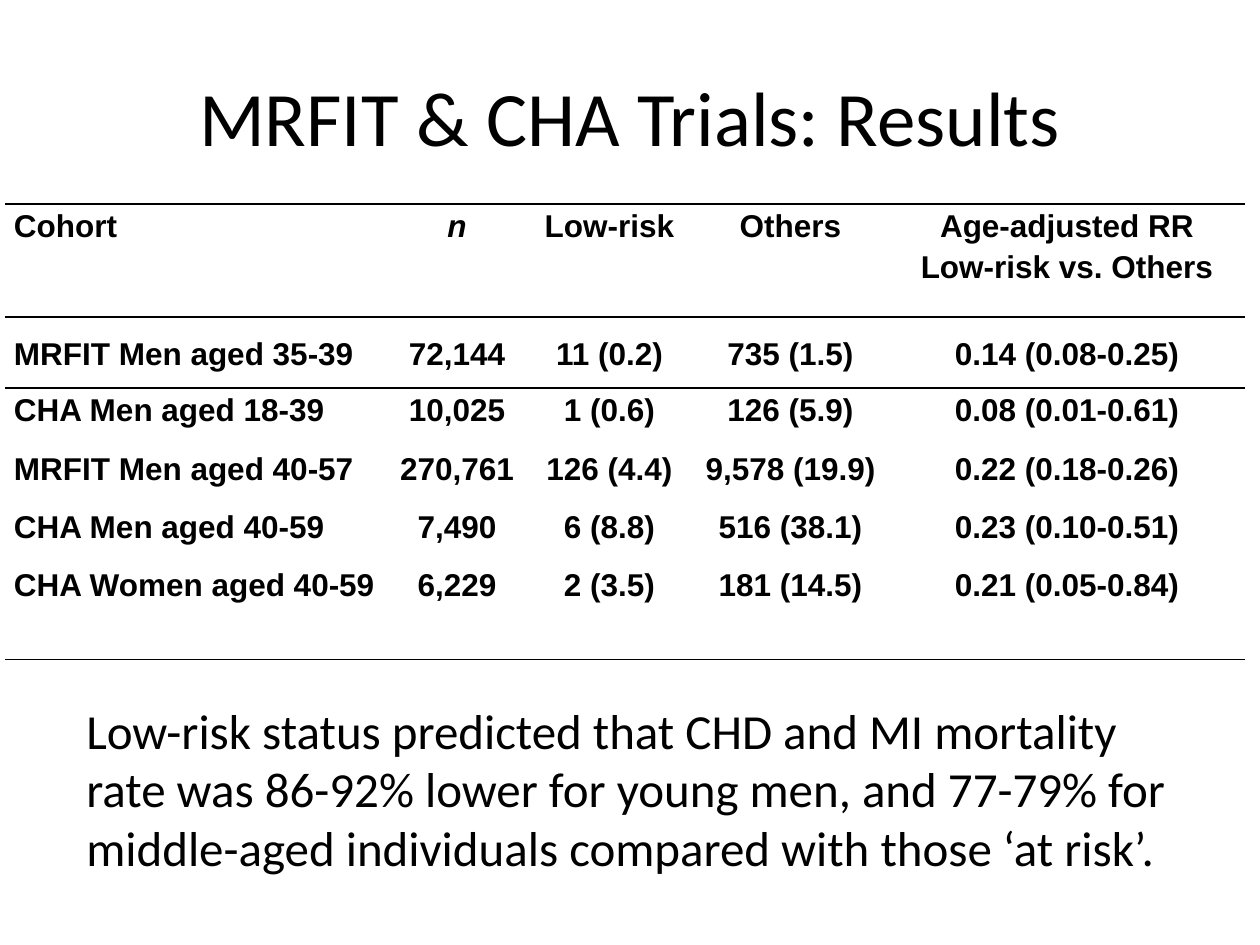
from lxml import etree
from pptx import Presentation
from pptx.dml.color import RGBColor
from pptx.enum.text import MSO_ANCHOR, MSO_AUTO_SIZE, PP_ALIGN
from pptx.oxml.ns import qn
from pptx.util import Emu, Pt

LEFT, CENTER = PP_ALIGN.LEFT, PP_ALIGN.CENTER
TOP, MIDDLE = MSO_ANCHOR.TOP, MSO_ANCHOR.MIDDLE
GROW = MSO_AUTO_SIZE.SHAPE_TO_FIT_TEXT
BLACK = "000000"
NO_GRID_STYLE = "{2D5ABB26-0587-4C30-8999-92F81FD0307C}"


def px(length):
    return Emu(round(length * 914400 / 126))


def add_text(paragraph, text, font_name, size, color=BLACK):
    run = paragraph.add_run()
    run.text = text
    run.font.name = font_name
    run.font.size = Pt(size)
    run.font.color.rgb = RGBColor.from_string(color)
    return run


presentation = Presentation()
presentation.slide_width = px(1260)
presentation.slide_height = px(945)
slide = presentation.slides.add_slide(presentation.slide_layouts[5])

title = slide.shapes.title
title.left, title.top, title.width, title.height = px(63), px(37), px(1134), px(158)
title.text_frame.vertical_anchor = MIDDLE
title_paragraph = title.text_frame.paragraphs[0]
title_paragraph.alignment = CENTER
add_text(title_paragraph, "MRFIT & CHA Trials: Results", "Calibri", 44)

rows = [
    ["Cohort", "n", "Low-risk", "Others", "Age-adjusted RR\nLow-risk vs. Others"],
    ["MRFIT Men aged 35-39", "72,144", "11 (0.2)", "735 (1.5)", "0.14 (0.08-0.25)"],
    ["CHA Men aged 18-39", "10,025", "1 (0.6)", "126 (5.9)", "0.08 (0.01-0.61)"],
    ["MRFIT Men aged 40-57", "270,761", "126 (4.4)", "9,578 (19.9)", "0.22 (0.18-0.26)"],
    ["CHA Men aged 40-59", "7,490", "6 (8.8)", "516 (38.1)", "0.23 (0.10-0.51)"],
    ["CHA Women aged 40-59", "6,229", "2 (3.5)", "181 (14.5)", "0.21 (0.05-0.84)"],
    [""] * 5,
]
column_widths = [382, 140, 165, 197, 356]
row_heights = [113, 71, 38, 76, 38, 76, 38]
row_borders = {0: ["a:lnT", "a:lnB"], 1: ["a:lnT"], len(rows) - 1: ["a:lnB"]}

table = slide.shapes.add_table(
    len(rows), len(column_widths), px(5), px(204),
    px(sum(column_widths)), px(sum(row_heights)),
).table
table.horz_banding = False
table._tbl.tblPr.find(qn("a:tableStyleId")).text = NO_GRID_STYLE
for column, width in zip(table.columns, column_widths):
    column.width = px(width)
for row, height in zip(table.rows, row_heights):
    row.height = px(height)

for row_index, row_texts in enumerate(rows):
    for column_index, text in enumerate(row_texts):
        cell = table.cell(row_index, column_index)
        cell.margin_left = cell.margin_right = px(9)
        cell.margin_top = cell.margin_bottom = 0
        cell.vertical_anchor = MIDDLE if row_index else TOP
        cell.fill.background()
        for position, tag in enumerate(row_borders.get(row_index, [])):
            border = etree.Element(qn(tag), w=str(Pt(1)))
            border_fill = etree.SubElement(border, qn("a:solidFill"))
            etree.SubElement(border_fill, qn("a:srgbClr"), val=BLACK)
            cell._tc.tcPr.insert(position, border)
        if not text:
            continue
        for line_index, line in enumerate(text.split("\n")):
            text_frame = cell.text_frame
            paragraph = text_frame.add_paragraph() if line_index else text_frame.paragraphs[0]
            paragraph.alignment = CENTER if column_index else LEFT
            paragraph.line_spacing = 1.15
            run = add_text(paragraph, line, "Arial", 18)
            run.font.bold = True
            run.font.italic = line == "n"

summary = slide.shapes.add_textbox(px(74), px(694), px(1131), px(190))
summary.text_frame.word_wrap = True
summary.text_frame.auto_size = GROW
add_text(
    summary.text_frame.paragraphs[0],
    "Low-risk status predicted that CHD and MI mortality rate was 86-92% lower "
    "for young men, and 77-79% for middle-aged individuals compared with those ‘at risk’.",
    "Calibri", 28,
)

presentation.save("out.pptx")
